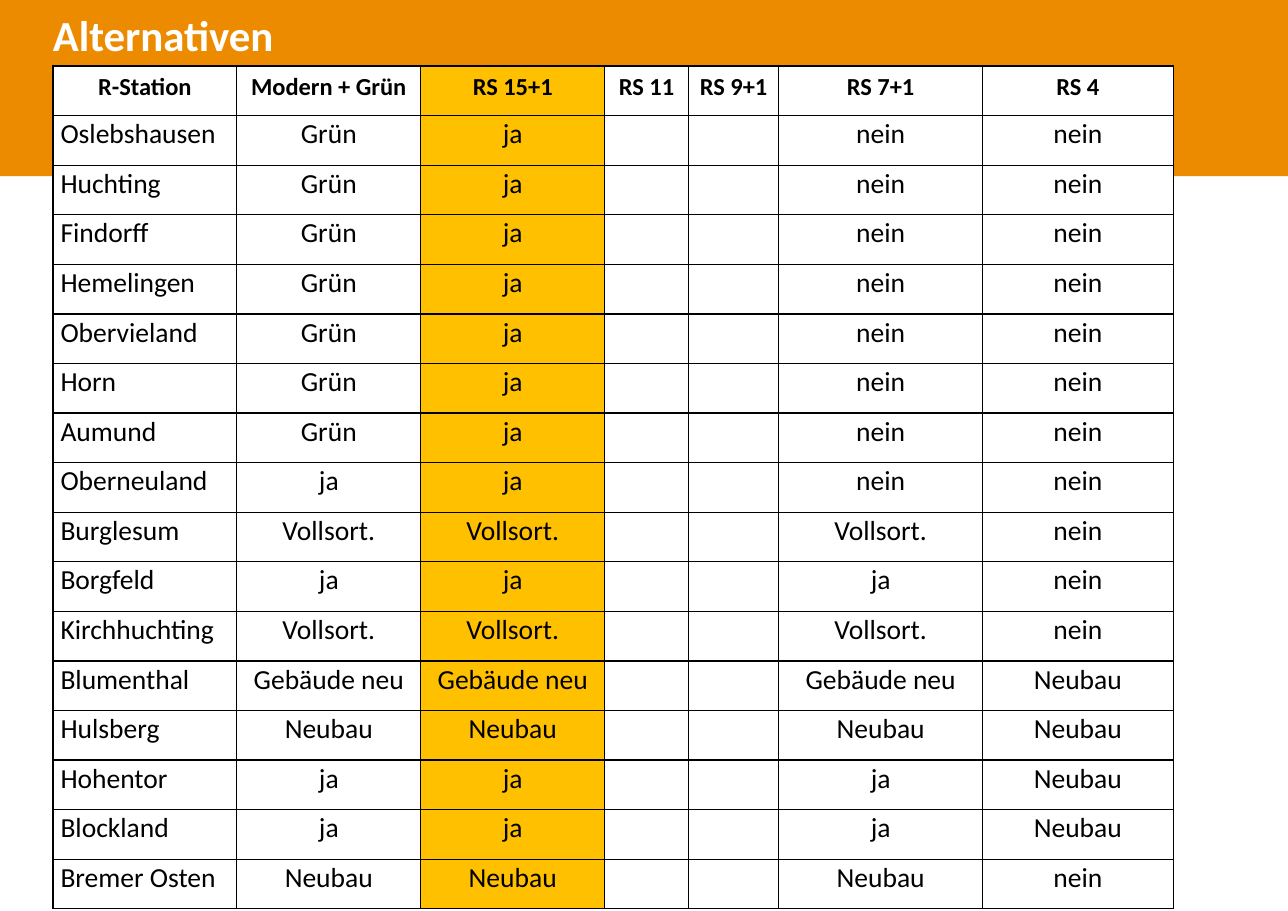
from typing import Any, NamedTuple

from lxml import etree
from pptx import Presentation
from pptx.dml.color import RGBColor
from pptx.enum.shapes import MSO_SHAPE
from pptx.enum.text import MSO_ANCHOR, MSO_AUTO_SIZE, PP_ALIGN
from pptx.oxml.ns import qn
from pptx.util import Pt

RECT = MSO_SHAPE.RECTANGLE
MIDDLE = MSO_ANCHOR.MIDDLE
NO_FIT = MSO_AUTO_SIZE.NONE
LEFT, CENTER = PP_ALIGN.LEFT, PP_ALIGN.CENTER

ORANGE = RGBColor(0xED, 0x8B, 0x00)
AMBER = RGBColor(0xFF, 0xC0, 0x00)
WHITE = RGBColor(0xFF, 0xFF, 0xFF)
BLACK = RGBColor(0x00, 0x00, 0x00)

SLIDE_W, SLIDE_H = Pt(841.68), Pt(595.44)
BAND_H = Pt(115.2)
MARGIN = Pt(34.56)
TABLE_TOP = Pt(43.2)
ROW_H = Pt(32.4)

TITLE_BOX = {"left": MARGIN, "top": Pt(5), "width": Pt(746), "height": Pt(39.6)}
TITLE_FRAME = {
    "margin_left": Pt(0), "margin_right": Pt(7.2), "margin_top": Pt(3.6),
    "margin_bottom": Pt(3.6), "vertical_anchor": MIDDLE, "auto_size": NO_FIT,
    "word_wrap": True,
}
TITLE_FONT = {"name": "Calibri", "size": Pt(28), "bold": True}
HEAD_FONT = {"name": "Calibri", "size": Pt(16), "bold": True}
BODY_FONT = {"name": "Calibri", "size": Pt(18), "bold": False}
CELL_FRAME = {
    "margin_left": Pt(5), "margin_right": Pt(5), "margin_top": Pt(0),
    "margin_bottom": Pt(0), "vertical_anchor": MIDDLE,
}
TABLE_FLAGS = {"first_row": False, "horz_banding": False}


class Column(NamedTuple):
    head: str
    width: float
    fill: RGBColor = WHITE
    align: Any = CENTER


class Station(NamedTuple):
    name: str
    modern: str
    rs15: str
    rs7: str
    rs4: str

    def texts(self) -> list[str]:
        return [self.name, self.modern, self.rs15, "", "", self.rs7, self.rs4]


COLUMNS = [
    Column("R-Station", 120.24, align=LEFT),
    Column("Modern + Grün", 120.24),
    Column("RS 15+1", 120.24, AMBER),
    Column("RS 11", 54.72),
    Column("RS 9+1", 59.04),
    Column("RS 7+1", 133.2),
    Column("RS 4", 124.56),
]

GREEN_STATIONS = ["Oslebshausen", "Huchting", "Findorff", "Hemelingen",
                  "Obervieland", "Horn", "Aumund"]
STATIONS = [Station(name, "Grün", "ja", "nein", "nein") for name in GREEN_STATIONS] + [
    Station("Oberneuland", "ja", "ja", "nein", "nein"),
    Station("Burglesum", "Vollsort.", "Vollsort.", "Vollsort.", "nein"),
    Station("Borgfeld", "ja", "ja", "ja", "nein"),
    Station("Kirchhuchting", "Vollsort.", "Vollsort.", "Vollsort.", "nein"),
    Station("Blumenthal", "Gebäude neu", "Gebäude neu", "Gebäude neu", "Neubau"),
    Station("Hulsberg", "Neubau", "Neubau", "Neubau", "Neubau"),
    Station("Hohentor", "ja", "ja", "ja", "Neubau"),
    Station("Blockland", "ja", "ja", "ja", "Neubau"),
    Station("Bremer Osten", "Neubau", "Neubau", "Neubau", "nein"),
]


def apply(target: Any, values: dict[str, Any]) -> None:
    for key, value in values.items():
        setattr(target, key, value)


def add_band(s: Any) -> None:
    sp = s.shapes.add_shape(RECT, 0, 0, SLIDE_W, BAND_H)
    sp.shadow.inherit = False
    sp.fill.solid()
    sp.fill.fore_color.rgb = ORANGE
    sp.line.fill.background()
    s.shapes.title._element.addprevious(sp._element)


def set_title(s: Any, text: str) -> None:
    sp = s.shapes.title
    apply(sp, TITLE_BOX)
    tf = sp.text_frame
    apply(tf, TITLE_FRAME)
    p = tf.paragraphs[0]
    apply(p, {"alignment": LEFT, "line_spacing": 0.9})
    r = p.add_run()
    r.text = text
    apply(r.font, TITLE_FONT)
    r.font.color.rgb = WHITE


def add_borders(cell: Any) -> None:
    tc_pr = cell._tc.get_or_add_tcPr()
    for i, side in enumerate(("a:lnL", "a:lnR", "a:lnT", "a:lnB")):
        ln = etree.Element(qn(side), w=str(Pt(1)))
        fill = etree.SubElement(ln, qn("a:solidFill"))
        etree.SubElement(fill, qn("a:srgbClr"), val=str(BLACK))
        tc_pr.insert(i, ln)


def fill_cell(cell: Any, text: str, color: RGBColor, align: Any,
              font: dict[str, Any]) -> None:
    apply(cell, CELL_FRAME)
    cell.fill.solid()
    cell.fill.fore_color.rgb = color
    add_borders(cell)
    if text:
        p = cell.text_frame.paragraphs[0]
        apply(p, {"alignment": align, "line_spacing": Pt(14)})
        r = p.add_run()
        r.text = text
        apply(r.font, font)
        r.font.color.rgb = BLACK


def add_station_table(s: Any) -> None:
    n_rows = len(STATIONS) + 1
    width = Pt(sum(col.width for col in COLUMNS))
    table = s.shapes.add_table(n_rows, len(COLUMNS), MARGIN, TABLE_TOP,
                               width, ROW_H * n_rows).table
    apply(table, TABLE_FLAGS)
    for row in table.rows:
        row.height = ROW_H
    for j, col in enumerate(COLUMNS):
        table.columns[j].width = Pt(col.width)
        fill_cell(table.cell(0, j), col.head, col.fill, CENTER, HEAD_FONT)
        for i, station in enumerate(STATIONS, 1):
            fill_cell(table.cell(i, j), station.texts()[j], col.fill, col.align, BODY_FONT)


def main() -> None:
    prs = Presentation()
    apply(prs, {"slide_width": SLIDE_W, "slide_height": SLIDE_H})
    s = prs.slides.add_slide(prs.slide_layouts[5])
    add_band(s)
    set_title(s, "Alternativen")
    add_station_table(s)
    prs.save("out.pptx")


if __name__ == "__main__":
    main()
